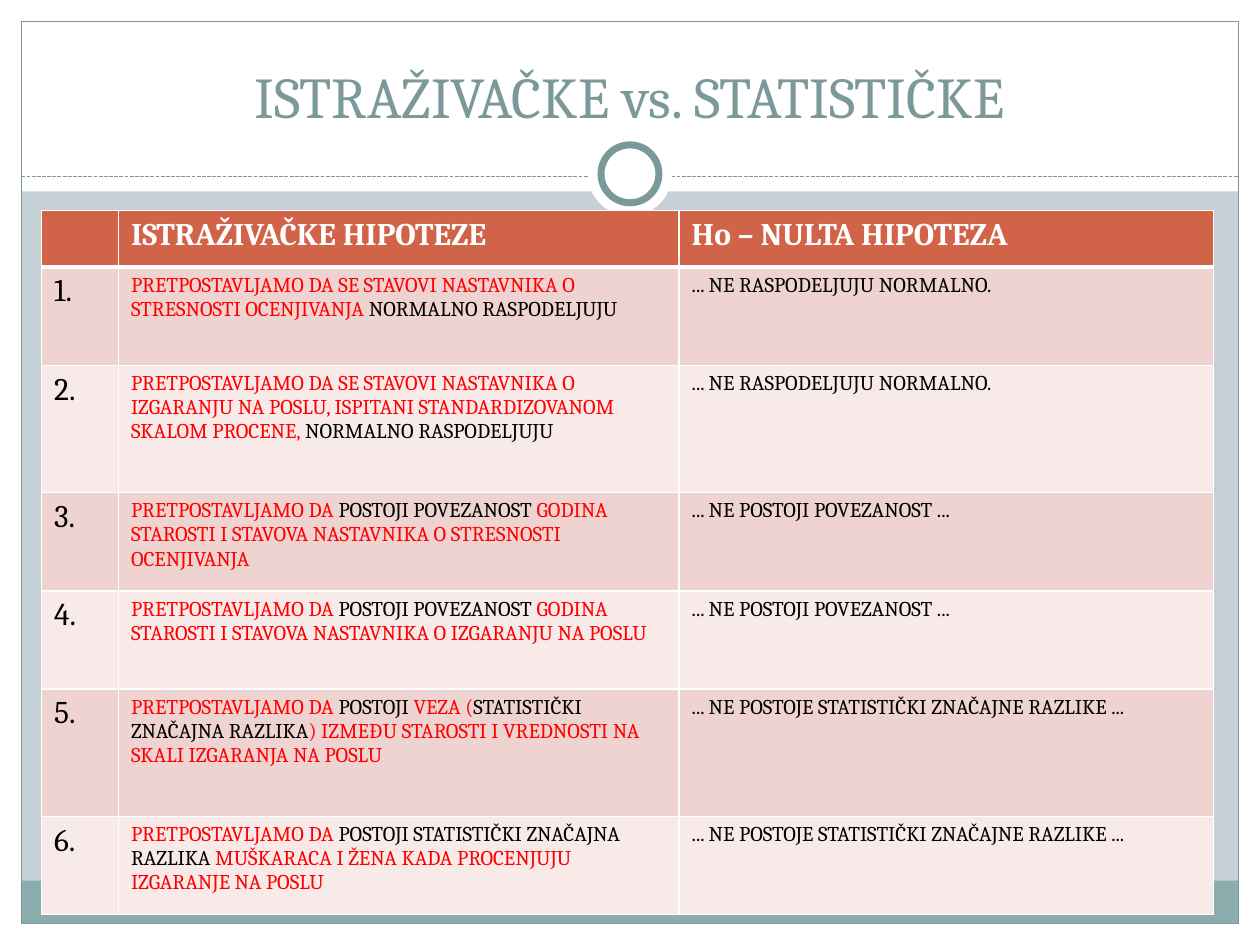
import pptx
import pptx.util
import pptx.dml.color
import pptx.enum.dml
import pptx.enum.shapes
import pptx.enum.text
import pptx.oxml
import pptx.oxml.ns
import lxml.etree

Inches = pptx.util.Inches
Pt = pptx.util.Pt
SHAPE = pptx.enum.shapes.MSO_SHAPE

COLORS = {
    "background": "C5D1D7", "white": "FFFFFF", "band": "8CADAE", "accent": "7C999A",
    "header": "D16349", "odd": "EED3D0", "even": "F7EAE9", "red": "FF0000", "black": "000000",
}
FONT = "Cambria"
WIDTH, HEIGHT = 10, 7.5
MARGIN = 0.17
INNER = WIDTH - 2 * MARGIN
RULE_TOP = 1.4
CIRCLE_CENTER = 1.38

TITLE = "ISTRAŽIVAČKE vs. STATISTIČKE"
HEADINGS = ["", "ISTRAŽIVAČKE HIPOTEZE", "Ho – NULTA HIPOTEZA"]
# Hypothesis segments alternate between red and black.
HYPOTHESES = [
    (["PRETPOSTAVLJAMO DA SE STAVOVI NASTAVNIKA O STRESNOSTI OCENJIVANJA ",
      "NORMALNO RASPODELJUJU"], "... NE RASPODELJUJU NORMALNO."),
    (["PRETPOSTAVLJAMO DA SE STAVOVI NASTAVNIKA O IZGARANJU NA POSLU, "
      "ISPITANI STANDARDIZOVANOM SKALOM PROCENE, ",
      "NORMALNO RASPODELJUJU"], "... NE RASPODELJUJU NORMALNO."),
    (["PRETPOSTAVLJAMO DA ", "POSTOJI POVEZANOST",
      " GODINA STAROSTI I STAVOVA NASTAVNIKA O STRESNOSTI OCENJIVANJA"],
     "... NE POSTOJI POVEZANOST ..."),
    (["PRETPOSTAVLJAMO DA ", "POSTOJI POVEZANOST",
      " GODINA STAROSTI I STAVOVA NASTAVNIKA O IZGARANJU NA POSLU"],
     "... NE POSTOJI POVEZANOST ..."),
    (["PRETPOSTAVLJAMO DA ", "POSTOJI", " VEZA (", "STATISTIČKI ZNAČAJNA RAZLIKA",
      ") IZMEĐU STAROSTI I VREDNOSTI NA SKALI IZGARANJA NA POSLU"],
     "... NE POSTOJE STATISTIČKI ZNAČAJNE RAZLIKE ..."),
    (["PRETPOSTAVLJAMO DA ", "POSTOJI STATISTIČKI ZNAČAJNA RAZLIKA",
      " MUŠKARACA I ŽENA KADA PROCENJUJU IZGARANJE NA POSLU"],
     "... NE POSTOJE STATISTIČKI ZNAČAJNE RAZLIKE ..."),
]
COLUMN_WIDTHS = [0.61, 4.45, 4.24]
ROW_HEIGHTS = [0.45, 0.78, 1.01, 0.78, 0.78, 1.01, 0.78]


def rgb(name):
    return pptx.dml.color.RGBColor.from_string(COLORS[name])


def add_part(page, preset, left, top, width, height, fill=None, line=None, weight=0.75):
    part = page.shapes.add_shape(preset, Inches(left), Inches(top), Inches(width), Inches(height))
    part.shadow.inherit = False
    if fill:
        part.fill.solid()
        part.fill.fore_color.rgb = rgb(fill)
    else:
        part.fill.background()
    if line:
        part.line.color.rgb = rgb(line)
        part.line.width = Pt(weight)
    else:
        part.line.fill.background()


def add_circle(page, diameter, **style):
    add_part(page, SHAPE.OVAL, (WIDTH - diameter) / 2, CIRCLE_CENTER - diameter / 2,
             diameter, diameter, fill="white", **style)


def add_run(para, text, size, color, bold=False):
    span = para.add_run()
    span.text = text
    span.font.name = FONT
    span.font.size = Pt(size)
    span.font.bold = bold
    span.font.color.rgb = rgb(color)


def add_frame(page):
    for left, top, width, height in [
        (0, HEIGHT - MARGIN, WIDTH, MARGIN), (0, 0, WIDTH, 1.52),
        (0, 0, MARGIN, HEIGHT), (WIDTH - MARGIN, 0, MARGIN, HEIGHT),
    ]:
        add_part(page, SHAPE.RECTANGLE, left, top, width, height, fill="white")
    add_part(page, SHAPE.RECTANGLE, MARGIN, 6.99, INNER, 0.34, fill="band")
    add_part(page, SHAPE.RECTANGLE, MARGIN, MARGIN, INNER, HEIGHT - 2 * MARGIN, line="accent")
    rule = page.shapes.add_connector(
        pptx.enum.shapes.MSO_CONNECTOR.STRAIGHT, Inches(MARGIN), Inches(RULE_TOP),
        Inches(WIDTH - MARGIN), Inches(RULE_TOP))
    rule.line.color.rgb = rgb("accent")
    rule.line.width = Pt(0.75)
    rule.line.dash_style = pptx.enum.dml.MSO_LINE.SQUARE_DOT
    lxml.etree.SubElement(rule.element.spPr, pptx.oxml.ns.qn("a:effectLst"))
    add_circle(page, 0.67)
    add_circle(page, 0.46, line="accent", weight=4)


def format_title(page):
    title = page.shapes.title
    title.left, title.top = Inches(0.33), Inches(0.25)
    title.width, title.height = Inches(9.33), Inches(0.83)
    title.text_frame.vertical_anchor = pptx.enum.text.MSO_ANCHOR.BOTTOM
    para = title.text_frame.paragraphs[0]
    para.alignment = pptx.enum.text.PP_ALIGN.CENTER
    add_run(para, TITLE, 33, "accent")
    page.shapes.element.append(title.element)


def style_cell(cell, fill, row):
    properties = cell._tc.get_or_add_tcPr()
    heavy_side = {0: "B", 1: "T"}.get(row)
    for side in "LRTB":
        weight = Pt(3 if side == heavy_side else 1)
        properties.append(pptx.oxml.parse_xml(
            f'<a:ln{side} {pptx.oxml.ns.nsdecls("a")} w="{weight}"><a:solidFill>'
            f'<a:srgbClr val="{COLORS["white"]}"/></a:solidFill></a:ln{side}>'))
    cell.fill.solid()
    cell.fill.fore_color.rgb = rgb(fill)


def add_hypotheses(page):
    rows = [[[(text, 18, "white", True)] if text else [] for text in HEADINGS]]
    for number, (segments, null_text) in enumerate(HYPOTHESES, 1):
        research = [(text, 12, ("red", "black")[index % 2]) for index, text in enumerate(segments)]
        rows.append([[(f"{number}.", 18, "black")], research, [(null_text, 12, "black")]])
    table = page.shapes.add_table(
        len(rows), len(COLUMN_WIDTHS), Inches(0.33), Inches(1.67),
        Inches(sum(COLUMN_WIDTHS)), Inches(sum(ROW_HEIGHTS))).table
    for column, width in zip(table.columns, COLUMN_WIDTHS):
        column.width = Inches(width)
    for index, (row, height) in enumerate(zip(rows, ROW_HEIGHTS)):
        table.rows[index].height = Inches(height)
        fill = "header" if index == 0 else ("even", "odd")[index % 2]
        for position, runs in enumerate(row):
            cell = table.cell(index, position)
            style_cell(cell, fill, index)
            for run in runs:
                add_run(cell.text_frame.paragraphs[0], *run)


def main():
    deck = pptx.Presentation()
    deck.slide_width, deck.slide_height = Inches(WIDTH), Inches(HEIGHT)
    page = deck.slides.add_slide(deck.slide_layouts[5])
    page.background.fill.solid()
    page.background.fill.fore_color.rgb = rgb("background")
    add_frame(page)
    format_title(page)
    add_hypotheses(page)
    deck.save("out.pptx")


if __name__ == "__main__":
    main()
